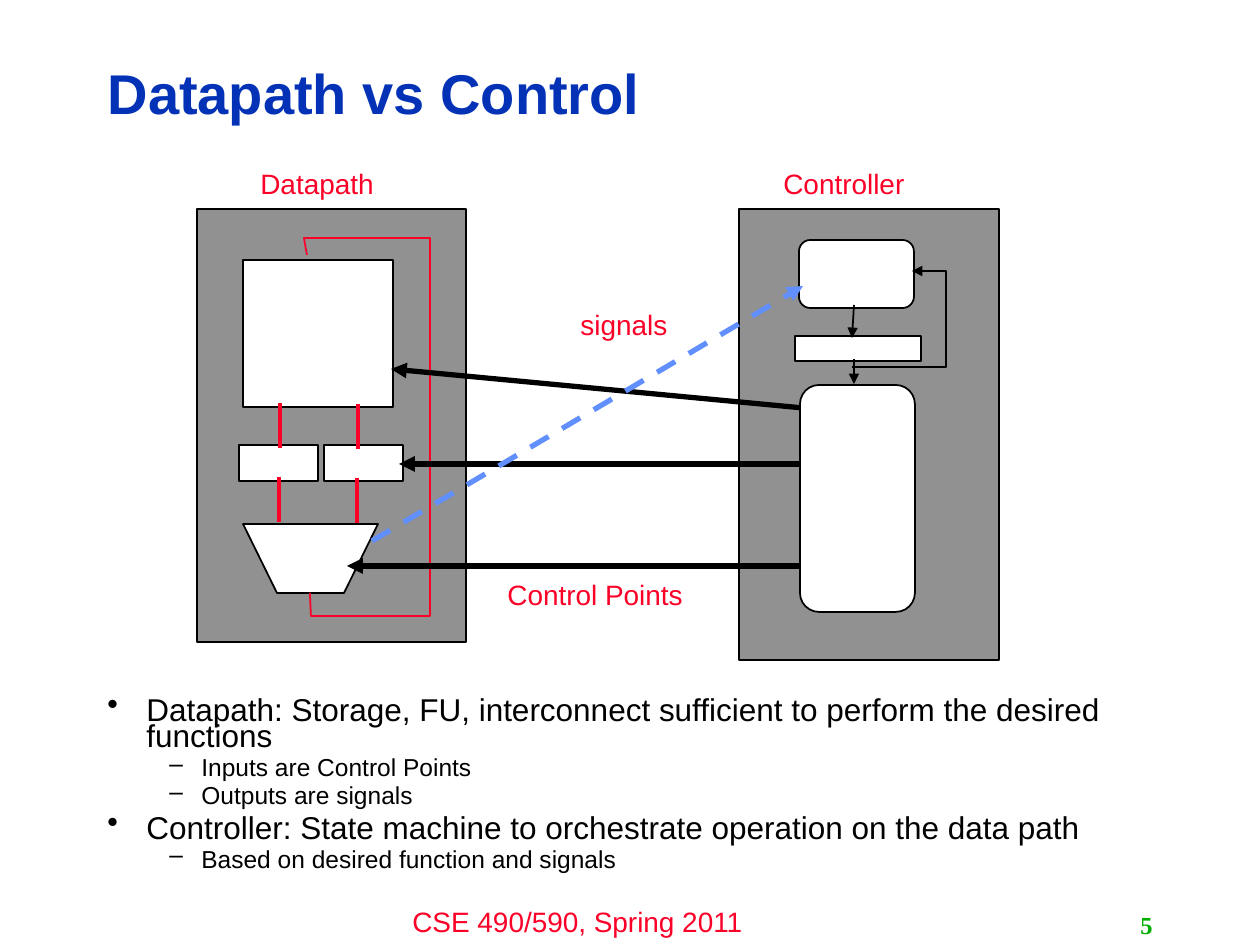
from lxml import etree
from pptx import Presentation
from pptx.dml.color import RGBColor
from pptx.enum.dml import MSO_LINE
from pptx.enum.shapes import MSO_CONNECTOR, MSO_SHAPE
from pptx.enum.text import MSO_ANCHOR, PP_ALIGN
from pptx.oxml.ns import qn
from pptx.util import Pt

PX = 914400 / 126  # EMU per px
BLACK = RGBColor(0x00, 0x00, 0x00)
WHITE = RGBColor(0xFF, 0xFF, 0xFF)
GREY = RGBColor(0x91, 0x91, 0x91)
RED = RGBColor(0xFC, 0x01, 0x28)
NAVY = RGBColor(0x03, 0x32, 0xB7)
BLUE = RGBColor(0x61, 0x8F, 0xFD)
GREEN = RGBColor(0x00, 0xAE, 0x00)
RECT, ROUND = MSO_SHAPE.RECTANGLE, MSO_SHAPE.ROUNDED_RECTANGLE
STRAIGHT = MSO_CONNECTOR.STRAIGHT
DASH = MSO_LINE.DASH
MIDDLE = MSO_ANCHOR.MIDDLE
LEFT, CENTER, RIGHT = PP_ALIGN.LEFT, PP_ALIGN.CENTER, PP_ALIGN.RIGHT

BULLETS = [
    (0, "Datapath: Storage, FU, interconnect sufficient to perform the desired functions"),
    (1, "Inputs are Control Points"),
    (1, "Outputs are signals"),
    (0, "Controller: State machine to orchestrate operation on the data path"),
    (1, "Based on desired function and signals"),
]
# Per level: bullet, font size, left margin px, hanging indent px
LEVELS = [("•", 18, 39, 39), ("–", 14, 94, 32)]


def px(*lengths):
    return [round(n * PX) for n in lengths]


def format_font(p, size, color, bold=False, name="Arial"):
    for r in p.runs:
        r.font.name, r.font.size, r.font.bold = name, Pt(size), bold
        r.font.color.rgb = color


def format_line(sp, color, width):
    sp.line.color.rgb = color
    sp.line.width = Pt(width)


def add_arrowhead(sp):
    etree.SubElement(sp.line._get_or_add_ln(), qn("a:tailEnd"), type="triangle")


def add_title(slide, text, box):
    title = slide.shapes.title
    title.left, title.top, title.width, title.height = px(*box)
    tf = title.text_frame
    tf.text = text
    tf.vertical_anchor = MIDDLE
    p = tf.paragraphs[0]
    p.alignment, p.line_spacing = LEFT, 0.9
    format_font(p, 32, NAVY, bold=True)


def add_label(slide, text, box, align=LEFT, size=16, color=RED, **font):
    tf = slide.shapes.add_textbox(*px(*box)).text_frame
    tf.word_wrap = align == CENTER
    tf.text = text
    p = tf.paragraphs[0]
    p.alignment = align
    format_font(p, size, color, **font)
    return tf


def add_bullets(slide, items, box):
    tf = slide.shapes.add_textbox(*px(*box)).text_frame
    tf.word_wrap = True
    for i, (level, text) in enumerate(items):
        char, size, margin, hang = LEVELS[level]
        p = tf.paragraphs[0] if i == 0 else tf.add_paragraph()
        p.text, p.level = text, level
        p.line_spacing, p.space_before = 0.7, Pt(0.3 * size)
        format_font(p, size, BLACK)
        pPr = p._p.get_or_add_pPr()
        pPr.set("marL", str(px(margin)[0]))
        pPr.set("indent", str(px(-hang)[0]))
        etree.SubElement(pPr, qn("a:buChar"), char=char)


def add_block(slide, box, fill=WHITE, kind=RECT):
    sp = slide.shapes.add_shape(kind, *px(*box))
    sp.shadow.inherit = False
    sp.fill.solid()
    sp.fill.fore_color.rgb = fill
    format_line(sp, BLACK, 1)


def add_outline(slide, points, color=BLACK, fill=None, arrow=False):
    builder = slide.shapes.build_freeform(*points[0], scale=PX)
    builder.add_line_segments(points[1:], close=fill is not None)
    sp = builder.convert_to_shape()
    sp.shadow.inherit = False
    if fill is None:
        sp.fill.background()
    else:
        sp.fill.solid()
        sp.fill.fore_color.rgb = fill
    format_line(sp, color, 1)
    if arrow:
        add_arrowhead(sp)


def add_line(slide, ends, color=BLACK, width=3, arrow=True, dash=None):
    line = slide.shapes.add_connector(STRAIGHT, *px(*ends))
    format_line(line, color, width)
    if dash:
        line.line.dash_style = dash
    if arrow:
        add_arrowhead(line)
    etree.SubElement(line._element.spPr, qn("a:effectLst"))


def add_datapath(slide):
    add_block(slide, (197, 209, 269, 433), GREY)
    add_label(slide, "Datapath", (248, 160, 145, 47))
    # Register file, two operand registers, ALU
    add_block(slide, (243, 260, 150, 147))
    for x in (239, 324):
        add_block(slide, (x, 445, 79, 36))
    add_outline(slide, [(243, 524), (277, 593), (344, 593), (378, 524)], fill=WHITE)
    # Operand wires and result bus
    for x, y in [(280, 403), (358, 404), (279, 477), (357, 478)]:
        add_line(slide, (x, y, x, y + 45), RED, 2.25, arrow=False)
    add_outline(slide, [(310, 593), (311, 616), (430, 616), (430, 238),
                        (304, 238), (307, 255)], RED)


def add_controller(slide):
    add_block(slide, (739, 209, 260, 451), GREY)
    add_label(slide, "Controller", (771, 160, 159, 47))
    # Control points driven by the controller
    for ends in [(803, 408, 391, 369), (801, 464, 399, 464), (801, 566, 347, 566)]:
        add_line(slide, ends)
    # State register, next-state logic, output logic
    add_block(slide, (795, 336, 126, 25))
    add_block(slide, (799, 240, 115, 68), kind=ROUND)
    add_block(slide, (800, 385, 115, 227), kind=ROUND)
    for ends in [(854, 305, 852, 338), (854, 359, 854, 384)]:
        add_line(slide, ends, width=1)
    add_outline(slide, [(852, 367), (946, 367), (946, 271), (912, 271)], arrow=True)


def main():
    prs = Presentation()
    prs.slide_width, prs.slide_height = px(1260, 945)
    slide = prs.slides.add_slide(prs.slide_layouts[5])

    # Footer and page number
    add_label(slide, "CSE 490/590, Spring 2011", (368, 898, 419, 47), CENTER)
    number = add_label(slide, "5", (903, 905, 262, 40), RIGHT, 14, GREEN,
                       bold=True, name="Times New Roman")
    number.word_wrap = True
    number.vertical_anchor = MIDDLE

    # Title and bullets
    add_title(slide, "Datapath vs Control", (95, 45, 1005, 102))
    add_bullets(slide, BULLETS, (95, 694, 1061, 198))

    # Diagram
    add_datapath(slide)
    add_controller(slide)
    add_label(slide, "Control Points", (495, 571, 218, 47))
    add_line(slide, (372, 541, 803, 286), BLUE, dash=DASH)
    add_label(slide, "signals", (568, 301, 122, 47))

    prs.save("out.pptx")


if __name__ == "__main__":
    main()
